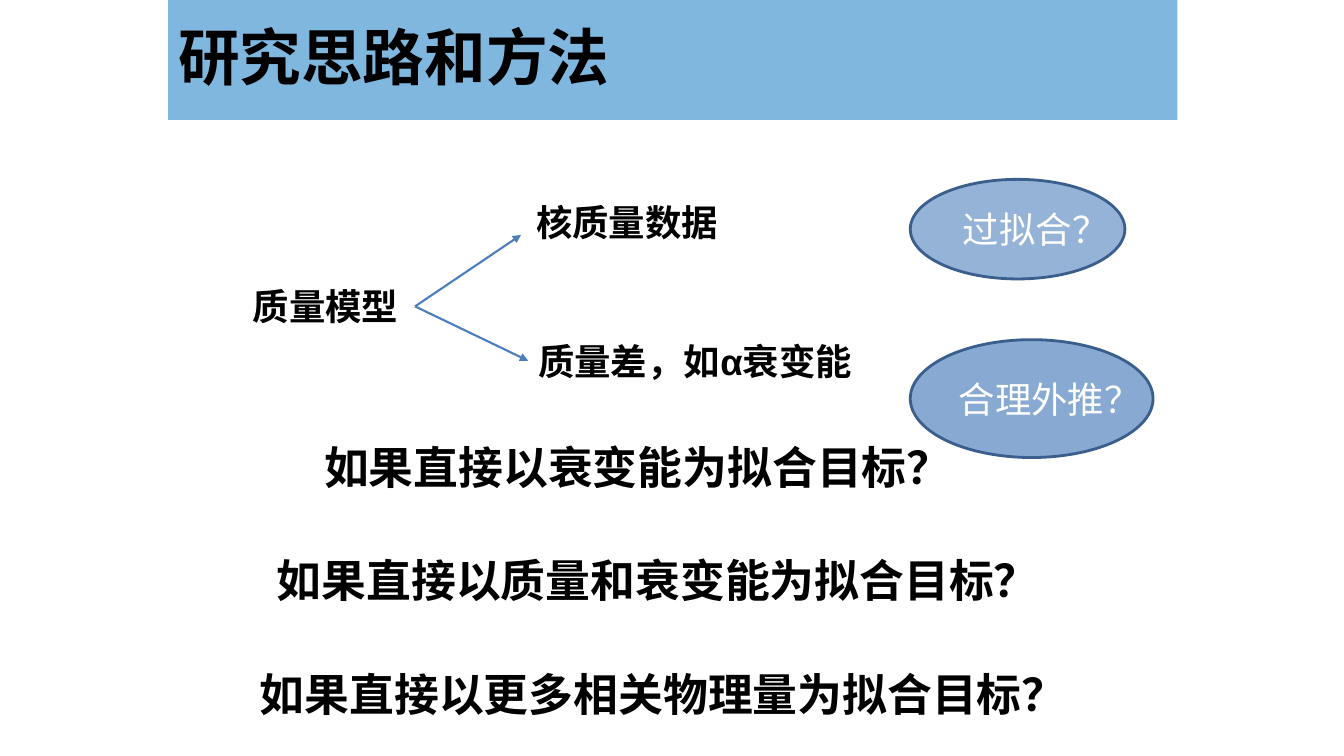
from lxml import etree
from pptx import Presentation
from pptx.dml.color import RGBColor
from pptx.enum import shapes, text
from pptx.oxml import ns
from pptx.util import Cm, Pt


def color(value):
    return RGBColor.from_string(value)


def write(sp, words, size, value="000000", bold=True, font="Calibri"):
    tf = sp.text_frame
    tf.word_wrap = True
    tf.text = words
    r = tf.paragraphs[0].runs[0]
    r.font.name, r.font.size, r.font.bold = font, Pt(size), bold
    r.font.color.rgb = color(value)
    return tf


prs = Presentation()
prs.slide_width, prs.slide_height = Cm(33.87), Cm(19.05)
s = prs.slides.add_slide(prs.slide_layouts[6])

# Title banner and ellipses: kind, box, fill, opacity in percent, outline, text
rect, oval = shapes.MSO_SHAPE.RECTANGLE, shapes.MSO_SHAPE.OVAL
left, center = text.PP_ALIGN.LEFT, text.PP_ALIGN.CENTER
banner = (rect, (4.24, -0.18, 25.43, 3.2), "0070C0", 50, None,
          ("研究思路和方法", 44), left)
ellipses = [
    (oval, box, "4F81BD", opacity, "3A5F8C", (words, 26, "FFFFFF", False), center)
    for words, box, opacity in [
        ("过拟合？", (22.94, 4.52, 5.41, 2.51), 60),
        ("合理外推？", (22.94, 8.56, 6.12, 2.97), 67),
    ]
]
for kind, box, fill, opacity, outline, label, align in [banner] + ellipses:
    sp = s.shapes.add_shape(kind, *map(Cm, box))
    sp.shadow.inherit = False
    sp.fill.solid()
    sp.fill.fore_color.rgb = color(fill)
    srgb = sp.fill._xPr.find(".//" + ns.qn("a:srgbClr"))
    etree.SubElement(srgb, ns.qn("a:alpha"), val=str(opacity * 1000))
    if outline:
        sp.line.color.rgb = color(outline)
        sp.line.width = Pt(2)
    else:
        sp.line.fill.background()
    tf = write(sp, *label)
    tf.vertical_anchor = text.MSO_ANCHOR.MIDDLE
    tf.paragraphs[0].alignment = align

# Mass model and its two kinds of data
for words, x, y, width, font in [
    ("质量模型", 6.12, 7.04, 4.32, "Calibri"),
    ("核质量数据", 13.26, 4.93, 5.41, "Calibri"),
    ("质量差，如α衰变能", 13.31, 8.41, 10.21, "Arial"),
]:
    sp = s.shapes.add_textbox(Cm(x), Cm(y), Cm(width), Cm(1.37))
    write(sp, words, 26, font=font)

# Arrows from the model to the data
for x, y in [(13.13, 5.92), (13.31, 9.09)]:
    arrow = s.shapes.add_connector(
        shapes.MSO_CONNECTOR.STRAIGHT, Cm(10.46), Cm(7.72), Cm(x), Cm(y))
    arrow.line.color.rgb = color("4B7EBC")
    arrow.line.width = Pt(1.5)
    etree.SubElement(arrow.line._get_or_add_ln(), ns.qn("a:tailEnd"), type="triangle")
    etree.SubElement(arrow._element.spPr, ns.qn("a:effectLst"))

# Questions, evenly spaced
for i, (target, x, width) in enumerate([
    ("衰变能", 7.92, 16),
    ("质量和衰变能", 6.73, 19.05),
    ("更多相关物理量", 6.3, 20.04),
]):
    sp = s.shapes.add_textbox(Cm(x), Cm(10.95 + 2.86 * i), Cm(width), Cm(1.63))
    write(sp, f"如果直接以{target}为拟合目标？", 32)

prs.save("out.pptx")
